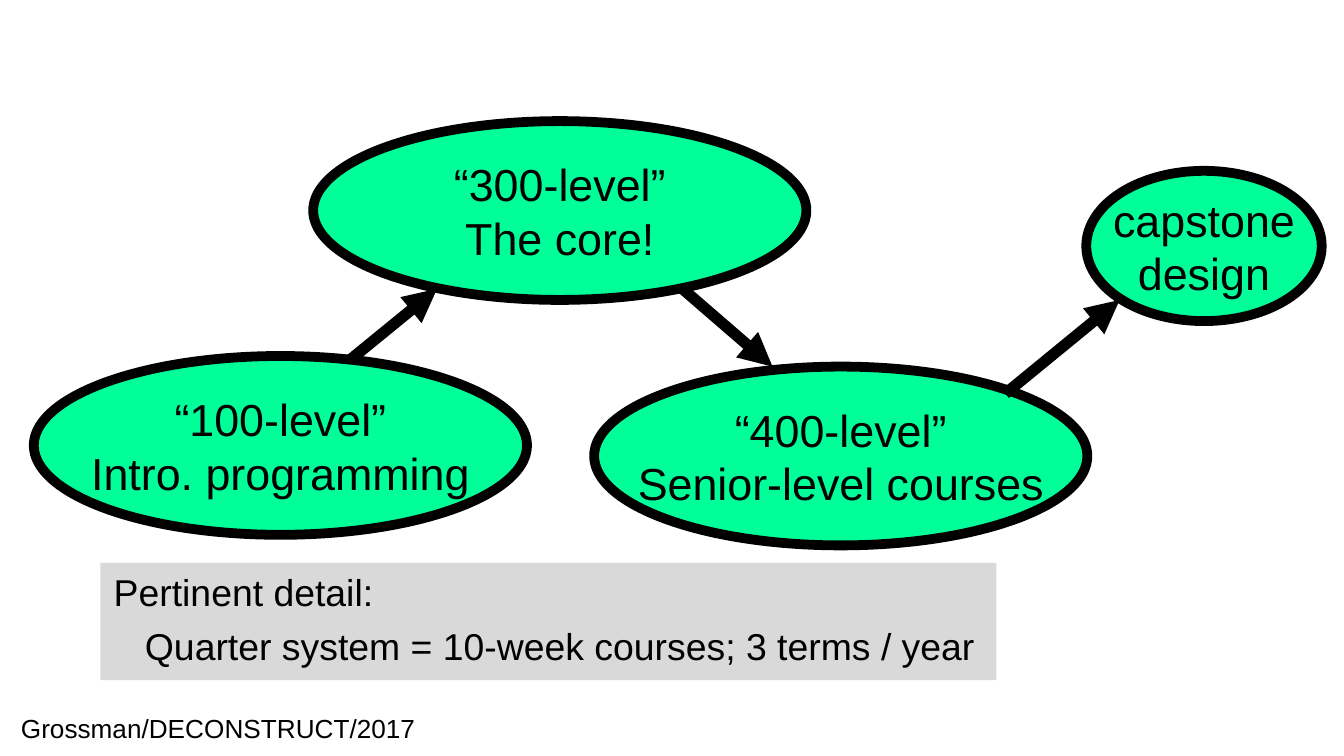
"""Build a slide showing how course levels lead from intro programming to capstone design."""
import lxml.etree
import pptx
import pptx.dml.color
import pptx.enum.shapes
import pptx.enum.text
import pptx.oxml.ns
import pptx.util

Cm = pptx.util.Cm
Pt = pptx.util.Pt
RGB = pptx.dml.color.RGBColor
Shape = pptx.enum.shapes.MSO_SHAPE
Align = pptx.enum.text.PP_ALIGN


class Theme:
    font = "Arial"
    ink = RGB(0x00, 0x00, 0x00)
    level_fill = RGB(0x00, 0xFF, 0x99)
    detail_fill = RGB(0xD9, 0xD9, 0xD9)
    level_size = Pt(24)
    detail_size = Pt(20)
    footer_size = Pt(14)
    outline = Pt(5.25)
    arrow = Pt(6)


def write_lines(box, lines, size, alignment):
    frame = box.text_frame
    frame.text = "\n".join(lines)
    for para in frame.paragraphs:
        para.alignment = alignment
        para.font.name = Theme.font
        para.font.size = size
        para.font.color.rgb = Theme.ink


def add_arrow(page, ends):
    arrow = page.shapes.add_connector(
        pptx.enum.shapes.MSO_CONNECTOR.STRAIGHT, *map(Cm, ends))
    arrow.line.color.rgb = Theme.ink
    arrow.line.width = Theme.arrow
    qn = pptx.oxml.ns.qn
    head = lxml.etree.SubElement(arrow.line._get_or_add_ln(), qn("a:tailEnd"))
    head.set("type", "triangle")
    lxml.etree.SubElement(arrow._element.spPr, qn("a:effectLst"))


deck = pptx.Presentation()
deck.slide_width, deck.slide_height = Cm(25.4), Cm(14.29)
page = deck.slides.add_slide(deck.slide_layouts[6])

footer = page.shapes.add_textbox(Cm(-0.64), Cm(13.34), Cm(9.53), Cm(0.95))
footer.text_frame.word_wrap = True
write_lines(footer, ["Grossman/DECONSTRUCT/2017"], Theme.footer_size, Align.CENTER)

wide = (9.32, 3.38)
small = (4.45, 2.84)
steps = [
    ((12.9, 5.46, 14.6, 6.93), (5.92, 2.29), wide, ["“300-level”", "The core!"]),
    ((5.92, 7.37, 8.26, 5.46), (11.23, 6.93), wide, ["“400-level”", "Senior-level courses"]),
    ((19, 7.44, 21.16, 5.67), (20.53, 3.23), small, ["capstone", "design"]),
    (None, (0.64, 6.73), wide, ["“100-level”", "Intro. programming"]),
]
for arrow_ends, corner, size, lines in steps:
    if arrow_ends:
        add_arrow(page, arrow_ends)
    level = page.shapes.add_shape(Shape.OVAL, *map(Cm, corner + size))
    level.shadow.inherit = False
    level.fill.solid()
    level.fill.fore_color.rgb = Theme.level_fill
    level.line.color.rgb = Theme.ink
    level.line.width = Theme.outline
    level.text_frame.word_wrap = False
    level.text_frame.vertical_anchor = pptx.enum.text.MSO_ANCHOR.MIDDLE
    write_lines(level, lines, Theme.level_size, Align.CENTER)

detail = page.shapes.add_shape(Shape.RECTANGLE, Cm(1.9), Cm(10.64), Cm(16.93), Cm(2.22))
detail.shadow.inherit = False
detail.fill.solid()
detail.fill.fore_color.rgb = Theme.detail_fill
detail.line.fill.background()
detail.text_frame.word_wrap = True
detail.text_frame.vertical_anchor = pptx.enum.text.MSO_ANCHOR.TOP
write_lines(
    detail,
    ["Pertinent detail:", "Quarter system = 10-week courses; 3 terms / year"],
    Theme.detail_size, Align.LEFT)
term_line = detail.text_frame.paragraphs[1]
term_line.space_before = Pt(5)
term_line._p.get_or_add_pPr().set("marL", str(Cm(0.59)))

deck.save("out.pptx")
